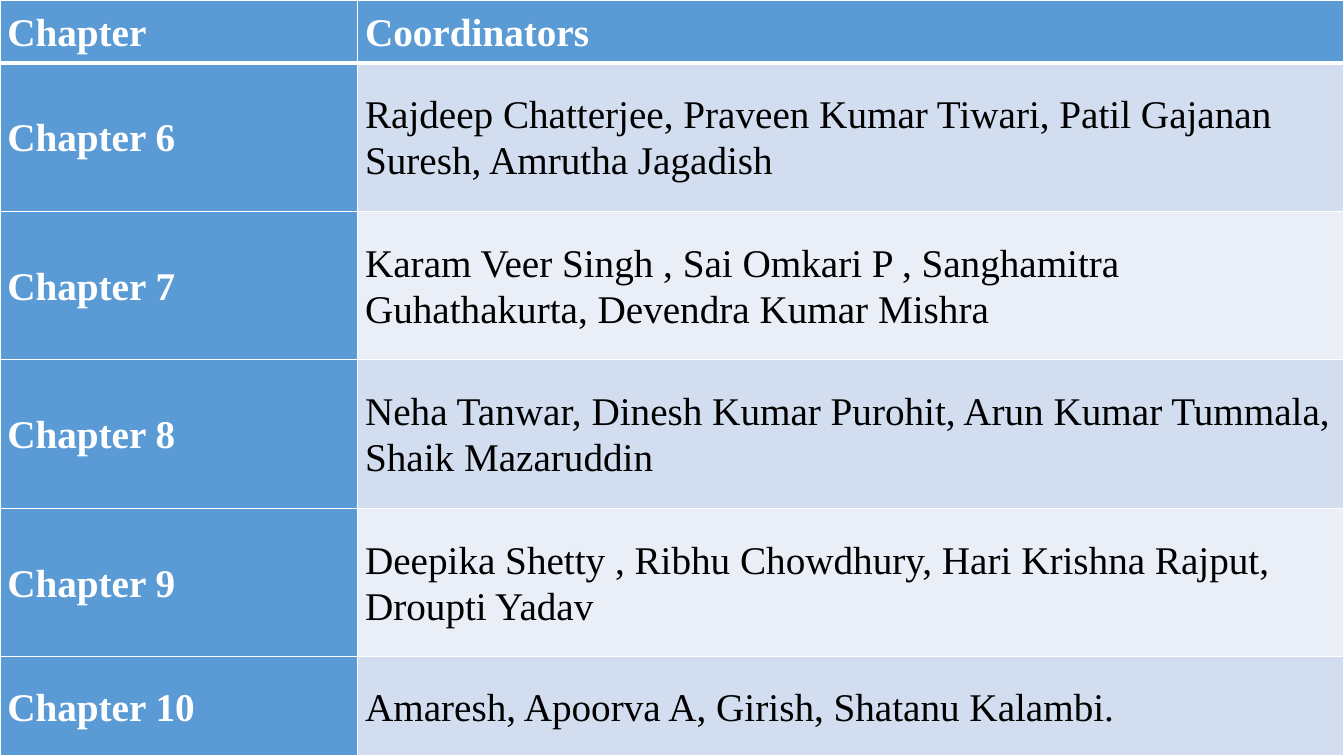
import lxml.etree
import pptx
import pptx.dml.color
import pptx.enum.text
import pptx.oxml.ns
import pptx.util

Pt = pptx.util.Pt
qn = pptx.oxml.ns.qn

COLORS = {
    "header": "5B9BD5",
    "odd_band": "D2DEEF",
    "even_band": "EAEFF7",
    "light": "FFFFFF",
    "dark": "000000",
}
FONT = "Times New Roman"
SLIDE_WIDTH, SLIDE_HEIGHT = 960, 540
CHAPTER_WIDTH = 255.6
HEADER_HEIGHT, CHAPTER_HEIGHT, LAST_HEIGHT = 44.8, 106.1, 70.8

ROWS = [
    ("Chapter", "Coordinators"),
    ("Chapter 6", "Rajdeep Chatterjee, Praveen Kumar Tiwari, Patil Gajanan Suresh, Amrutha Jagadish"),
    ("Chapter 7", "Karam Veer Singh , Sai Omkari P , Sanghamitra Guhathakurta, Devendra Kumar Mishra"),
    ("Chapter 8", "Neha Tanwar, Dinesh Kumar Purohit, Arun Kumar Tummala, Shaik Mazaruddin"),
    ("Chapter 9", "Deepika Shetty , Ribhu Chowdhury, Hari Krishna Rajput, Droupti Yadav"),
    ("Chapter 10", "Amaresh, Apoorva A, Girish, Shatanu Kalambi."),
]


def rgb(name):
    return pptx.dml.color.RGBColor.from_string(COLORS[name])


def set_borders(cell, widths):
    """Draw white borders; widths are left, right, top and bottom in points."""
    properties = cell._tc.get_or_add_tcPr()
    for index, (side, width) in enumerate(zip("LRTB", widths)):
        line = lxml.etree.Element(qn(f"a:ln{side}"), w=str(Pt(width)))
        fill = lxml.etree.SubElement(line, qn("a:solidFill"))
        lxml.etree.SubElement(fill, qn("a:srgbClr"), val=COLORS["light"])
        properties.insert(index, line)


def fill_cell(cell, text, background, is_heading):
    cell.fill.solid()
    cell.fill.fore_color.rgb = rgb(background)
    cell.vertical_anchor = pptx.enum.text.MSO_ANCHOR.MIDDLE
    cell.margin_left = cell.margin_right = Pt(5.2)
    cell.margin_top = cell.margin_bottom = Pt(0)
    cell.text = text
    paragraph = cell.text_frame.paragraphs[0]
    paragraph.line_spacing = 1.07
    paragraph.font.name = FONT
    paragraph.font.size = Pt(28)
    paragraph.font.bold = is_heading
    paragraph.font.color.rgb = rgb("light" if is_heading else "dark")


def add_coordinator_table(slide):
    table = slide.shapes.add_table(
        len(ROWS), 2, Pt(0), Pt(0), Pt(SLIDE_WIDTH), Pt(SLIDE_HEIGHT)
    ).table
    table.first_col = True

    # Column widths and row heights
    table.columns[0].width = Pt(CHAPTER_WIDTH)
    table.columns[1].width = Pt(SLIDE_WIDTH - CHAPTER_WIDTH)
    heights = [HEADER_HEIGHT] + [CHAPTER_HEIGHT] * (len(ROWS) - 2) + [LAST_HEIGHT]
    for row, height in zip(table.rows, heights):
        row.height = Pt(height)

    # Cells: header row and chapter column are blue, the rest is banded
    for row_index, texts in enumerate(ROWS):
        band = "odd_band" if row_index % 2 else "even_band"
        top = 3 if row_index == 1 else 1
        bottom = 3 if row_index == 0 else 1
        for column_index, text in enumerate(texts):
            cell = table.cell(row_index, column_index)
            is_heading = row_index == 0 or column_index == 0
            fill_cell(cell, text, "header" if is_heading else band, is_heading)
            set_borders(cell, (1, 1, top, bottom))


def main():
    presentation = pptx.Presentation()
    presentation.slide_width = Pt(SLIDE_WIDTH)
    presentation.slide_height = Pt(SLIDE_HEIGHT)
    slide = presentation.slides.add_slide(presentation.slide_layouts[6])
    add_coordinator_table(slide)
    presentation.save("out.pptx")


if __name__ == "__main__":
    main()
